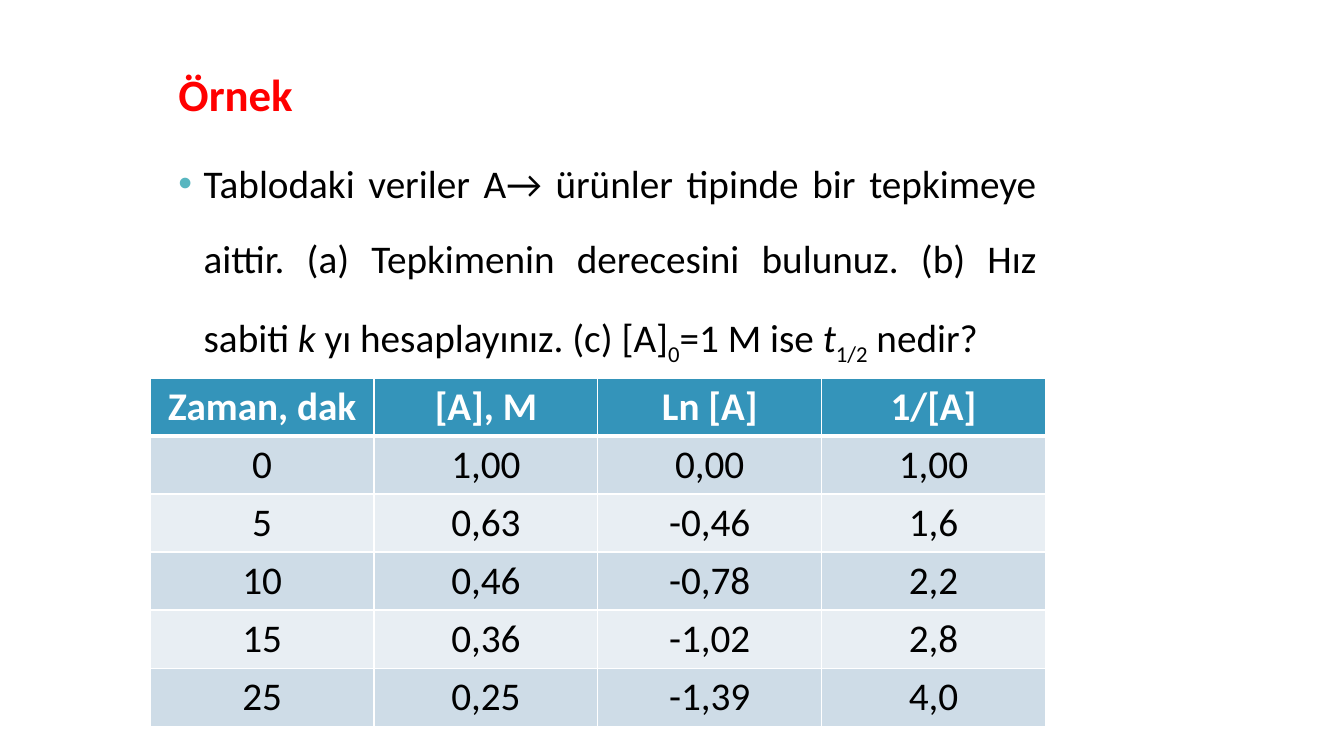
from lxml import etree
from pptx import Presentation
from pptx.dml.color import RGBColor
from pptx.enum.text import MSO_ANCHOR, MSO_AUTO_SIZE, PP_ALIGN
from pptx.oxml.ns import qn
from pptx.util import Inches, Pt

CENTER, JUSTIFY, LEFT = PP_ALIGN.CENTER, PP_ALIGN.JUSTIFY, PP_ALIGN.LEFT
BOTTOM, MIDDLE, TOP = MSO_ANCHOR.BOTTOM, MSO_ANCHOR.MIDDLE, MSO_ANCHOR.TOP
NO_FIT = MSO_AUTO_SIZE.NONE

QUESTION = [
    ("Tablodaki veriler A→ ürünler tipinde bir tepkimeye aittir. "
     "(a) Tepkimenin derecesini bulunuz. (b) Hız sabiti ", ""),
    ("k ", "italic"),
    ("yı hesaplayınız. (c) [A]", ""),
    ("0", "sub"),
    ("=1 M ise ", ""),
    ("t", "italic"),
    ("1/2", "sub"),
    (" nedir?", ""),
]
MEASUREMENTS = [
    ("Zaman, dak", "[A], M", "Ln [A]", "1/[A]"),
    ("0", "1,00", "0,00", "1,00"),
    ("5", "0,63", "-0,46", "1,6"),
    ("10", "0,46", "-0,78", "2,2"),
    ("15", "0,36", "-1,02", "2,8"),
    ("25", "0,25", "-1,39", "4,0"),
]


def rgb(value):
    return RGBColor.from_string(value)


def add_solid_fill(parent, color):
    fill = etree.SubElement(parent, qn("a:solidFill"))
    etree.SubElement(fill, qn("a:srgbClr"), val=color)


class SlideBuilder:
    font, size = "Calibri", 28
    black, white, red = "000000", "FFFFFF", "FF0000"
    header, bands, bullet = "3494BA", ("E8EEF3", "CEDCE7"), "58B6C0"

    def __init__(self, prs):
        self.slide = prs.slides.add_slide(prs.slide_layouts[1])

    def style(self, font, color, size=None, bold=False):
        font.name = self.font
        font.size = Pt(size or self.size)
        font.bold = bold
        font.color.rgb = rgb(color)

    def place(self, sp, left, top, width, height, anchor):
        sp.left, sp.top = Inches(left), Inches(top)
        sp.width, sp.height = Inches(width), Inches(height)
        tf = sp.text_frame
        tf.word_wrap = True
        tf.auto_size = NO_FIT
        tf.vertical_anchor = anchor
        return tf

    def title(self, text, *box):
        tf = self.place(self.slide.shapes.title, *box, BOTTOM)
        tf.text = text
        p = tf.paragraphs[0]
        p.alignment = LEFT
        p.line_spacing = 1.5
        self.style(p.runs[0].font, self.red, size=32, bold=True)

    def body(self, parts, *box):
        tf = self.place(self.slide.placeholders[1], *box, TOP)
        p = tf.paragraphs[0]
        p.alignment = JUSTIFY
        p.line_spacing = 1.6
        p.space_before = Pt(0)
        self.add_bullet(p)
        for text, look in parts:
            r = p.add_run()
            r.text = text
            self.style(r.font, self.black)
            r.font.italic = look == "italic"
            if look == "sub":
                r._r.get_or_add_rPr().set("baseline", "-25000")

    def add_bullet(self, p):
        pPr = p._p.get_or_add_pPr()
        pPr.set("marL", str(Inches(0.25)))
        pPr.set("indent", str(Inches(-0.25)))
        color = etree.SubElement(pPr, qn("a:buClr"))
        etree.SubElement(color, qn("a:srgbClr"), val=self.bullet)
        etree.SubElement(pPr, qn("a:buFont"), typeface="Arial")
        etree.SubElement(pPr, qn("a:buChar"), char="•")

    def table(self, rows, left, top, col_width, row_height):
        n_rows, n_cols = len(rows), len(rows[0])
        table = self.slide.shapes.add_table(
            n_rows, n_cols, Inches(left), Inches(top),
            Inches(col_width * n_cols), Inches(row_height * n_rows)).table
        for column in table.columns:
            column.width = Inches(col_width)
        for i, row in enumerate(rows):
            for j, text in enumerate(row):
                self.cell(table.cell(i, j), text, i)

    def cell(self, cell, text, row):
        is_header = row == 0
        cell.text = text
        cell.vertical_anchor = MIDDLE
        cell.fill.solid()
        cell.fill.fore_color.rgb = rgb(self.header if is_header else self.bands[row % 2])
        p = cell.text_frame.paragraphs[0]
        p.alignment = CENTER
        self.style(p.runs[0].font, self.white if is_header else self.black, bold=is_header)
        self.borders(cell, top=3 if row == 1 else 1, bottom=3 if is_header else 1)

    def borders(self, cell, top, bottom):
        tcPr = cell._tc.get_or_add_tcPr()
        widths = {"a:lnL": 1, "a:lnR": 1, "a:lnT": top, "a:lnB": bottom}
        for i, (tag, width) in enumerate(widths.items()):
            line = etree.Element(qn(tag), w=str(Pt(width)))
            add_solid_fill(line, self.white)
            tcPr.insert(i, line)


def main():
    prs = Presentation()
    prs.slide_width, prs.slide_height = Inches(13.33), Inches(7.5)
    s = SlideBuilder(prs)
    s.body(QUESTION, 1.67, 1.25, 8.71, 5.81)
    s.title("Örnek", 1.67, 0.17, 8.71, 1.08)
    s.table(MEASUREMENTS, 1.49, 3.75, col_width=2.22, row_height=0.57)
    prs.save("out.pptx")


if __name__ == "__main__":
    main()
